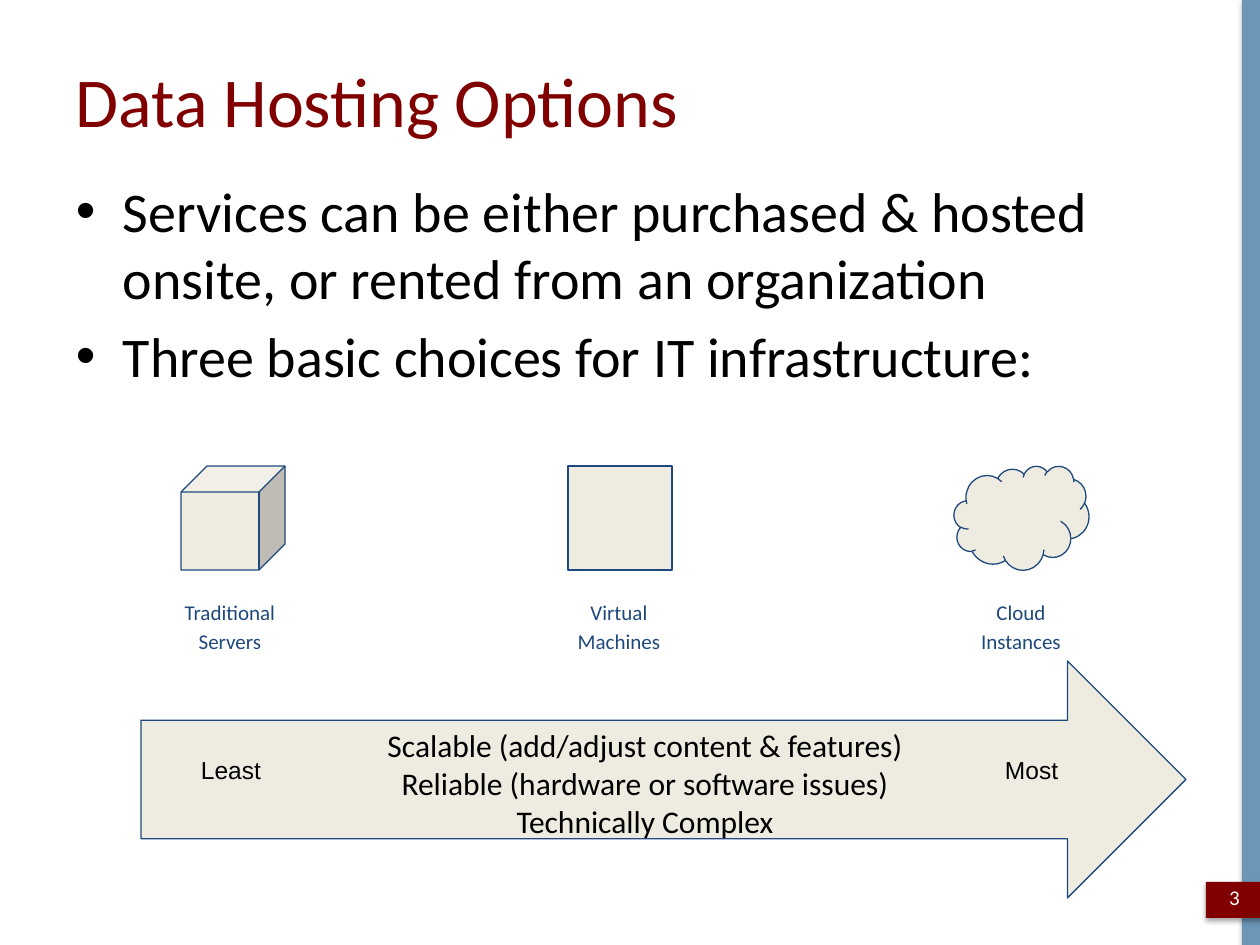
from lxml import etree
from pptx import Presentation
from pptx.dml.color import RGBColor
from pptx.enum.shapes import MSO_SHAPE
from pptx.enum.text import MSO_ANCHOR, PP_ALIGN
from pptx.oxml.ns import qn
from pptx.util import Emu, Pt

SCALE = 914400 / 126
LEFT, CENTER = PP_ALIGN.LEFT, PP_ALIGN.CENTER
TOP, MIDDLE = MSO_ANCHOR.TOP, MSO_ANCHOR.MIDDLE
RECTANGLE, CUBE, CLOUD = MSO_SHAPE.RECTANGLE, MSO_SHAPE.CUBE, MSO_SHAPE.CLOUD
RIGHT_ARROW = MSO_SHAPE.RIGHT_ARROW
COLORS = {
    "black": "000000",
    "white": "FFFFFF",
    "maroon": "800000",
    "steel": "6C95B6",
    "navy": "1F497D",
    "cream": "EEECE1",
}


def px(value):
    return Emu(round(value * SCALE))


def color(name):
    return RGBColor.from_string(COLORS[name])


def add_text(slide, box, lines, size, font="Calibri", ink="black", align=LEFT,
             anchor=TOP, inset=6, line_spacing=None, before=0, after=0, bullet_indent=0):
    shape = slide.shapes.add_textbox(*map(px, box))
    frame = shape.text_frame
    frame.word_wrap = True
    frame.vertical_anchor = anchor
    frame.margin_top = frame.margin_bottom = px(inset)
    frame.margin_left = frame.margin_right = px(13)
    for index, line in enumerate(lines):
        paragraph = frame.paragraphs[0] if index == 0 else frame.add_paragraph()
        paragraph.alignment = align
        paragraph.line_spacing = line_spacing
        paragraph.space_before = Pt(before)
        paragraph.space_after = Pt(after)
        run = paragraph.add_run()
        run.text = line
        run.font.size = Pt(size)
        run.font.name = font
        run.font.color.rgb = color(ink)
        if bullet_indent:
            add_bullet(paragraph, bullet_indent)


def add_bullet(paragraph, indent):
    properties = paragraph._p.get_or_add_pPr()
    properties.set("marL", str(px(indent)))
    properties.set("indent", str(px(-indent)))
    etree.SubElement(properties, qn("a:buFont")).set("typeface", "Arial")
    etree.SubElement(properties, qn("a:buChar")).set("char", "•")


def add_filled_shape(slide, kind, box, fill, line=None):
    shape = slide.shapes.add_shape(kind, *map(px, box))
    shape.shadow.inherit = False
    shape.fill.solid()
    shape.fill.fore_color.rgb = color(fill)
    if line:
        shape.line.color.rgb = color(line)
        shape.line.width = Pt(0.75)
    else:
        shape.line.fill.background()
    return shape


def add_shadow(shape):
    effects = shape._element.spPr.find(qn("a:effectLst"))
    shadow = etree.SubElement(effects, qn("a:outerShdw"), blurRad=str(Pt(3.1)),
                              dist=str(Pt(1.8)), dir="5400000", rotWithShape="0")
    shade = etree.SubElement(shadow, qn("a:srgbClr"), val=COLORS["black"])
    etree.SubElement(shade, qn("a:alpha"), val="35000")


def add_side_bar(slide, box, number):
    left, top, width, height = box
    add_shadow(add_filled_shape(slide, RECTANGLE, box, "steel"))
    badge = (left - 36, top + height - 63, 60, 36)
    add_shadow(add_filled_shape(slide, RECTANGLE, badge, "maroon"))
    add_text(slide, (left - 36, top + height - 73, 57, 50), [number], 12,
             ink="white", align=CENTER, anchor=MIDDLE)


def add_heading(slide, box, title, bullets):
    left, top, width, height = box
    add_text(slide, (left, top, width, 123), [title], 40, ink="maroon", anchor=MIDDLE)
    add_text(slide, (left, top + 132, width, height - 132), bullets, 32,
             before=6.4, bullet_indent=47)


def add_option(slide, box, kind, icon_offset, icon_width, label):
    left, top, width, height = box
    add_filled_shape(slide, kind, (left + icon_offset, top, icon_width, 104), "cream", "navy")
    add_text(slide, (left, top + 117, width, height - 117), [label], 12, ink="navy",
             align=CENTER, inset=13, line_spacing=1.15, after=16)


def add_scale_arrow(slide, box, qualities):
    left, top, width, height = box
    add_filled_shape(slide, RIGHT_ARROW, box, "cream", "navy")
    for offset, label in ((47, "Least"), (851, "Most")):
        add_text(slide, (left + offset, top + 81, 164, 48), [label], 14,
                 font="Arial", inset=13)
    add_text(slide, (left + 141, top + 52, 726, 151), qualities, 18,
             align=CENTER, inset=13)


def main():
    presentation = Presentation()
    presentation.slide_width, presentation.slide_height = px(1260), px(945)
    slide = presentation.slides.add_slide(presentation.slide_layouts[6])

    add_side_bar(slide, (1242, 0, 18, 945), "3")
    add_heading(slide, (63, 38, 1134, 791), "Data Hosting Options", [
        "Services can be either purchased & hosted onsite, or rented from an organization",
        "Three basic choices for IT infrastructure:",
    ])
    options = [
        (160, CUBE, 21, 104, "Traditional Servers"),
        (549, RECTANGLE, 19, 104, "Virtual Machines"),
        (951, CLOUD, 3, 135, "Cloud Instances"),
    ]
    for left, kind, icon_offset, icon_width, label in options:
        add_option(slide, (left, 466, 140, 193), kind, icon_offset, icon_width, label)
    add_scale_arrow(slide, (141, 661, 1045, 237), [
        "Scalable (add/adjust content & features)",
        "Reliable (hardware or software issues)",
        "Technically Complex",
    ])
    presentation.save("out.pptx")


if __name__ == "__main__":
    main()
